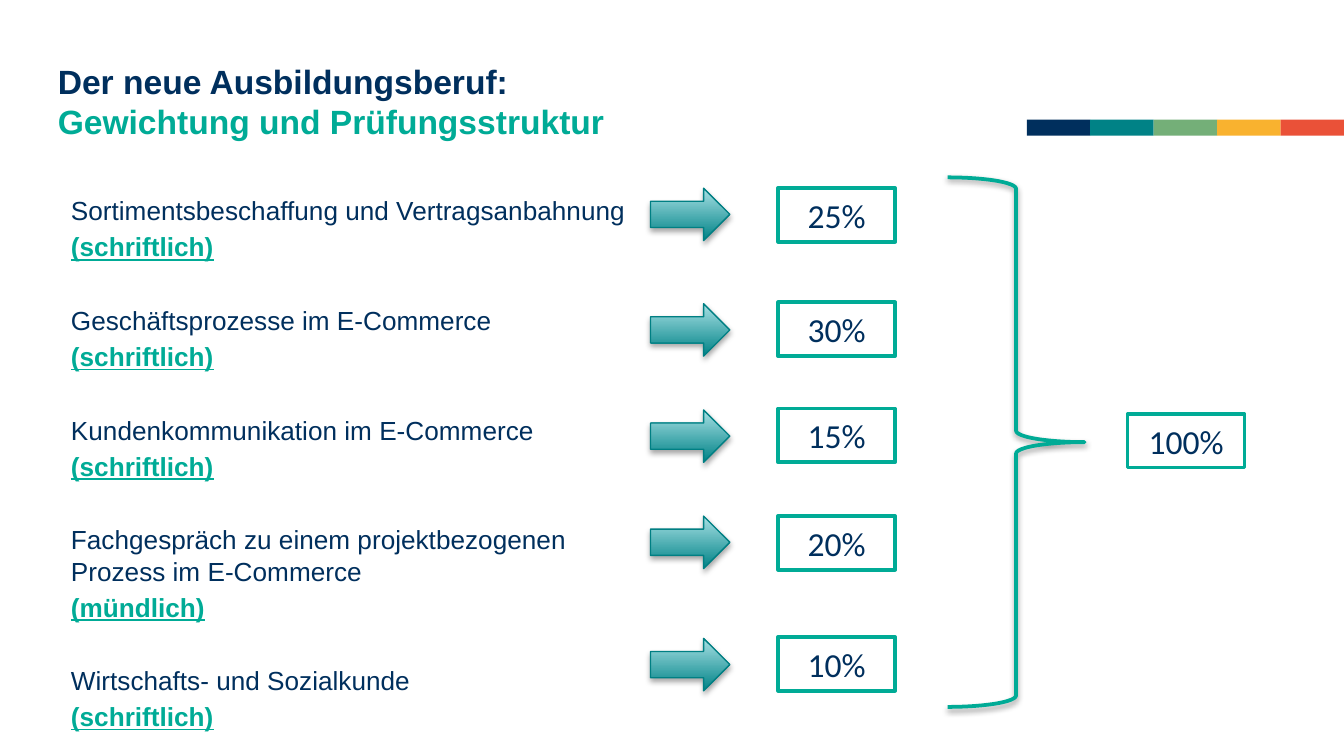
from lxml import etree
from pptx import Presentation
from pptx.dml.color import RGBColor
from pptx.enum.shapes import MSO_SHAPE as Shape
from pptx.enum.text import MSO_ANCHOR as Anchor, MSO_AUTO_SIZE as AutoSize, PP_ALIGN as Align
from pptx.oxml.ns import qn
from pptx.util import Inches, Pt

NAVY, GREEN, TEAL = "002F5D", "00AB96", "008286"
STRIPES = [NAVY, TEAL, "74AF78", "F9B22F", "EA5138"]
# exam part, kind of exam, weight, top of its arrow, top of its weight box
EXAMS = [
    ("Sortimentsbeschaffung und Vertragsanbahnung", "(schriftlich)", "25%", 1.4, 1.4),
    ("Geschäftsprozesse im E-Commerce", "(schriftlich)", "30%", 2.26, 2.25),
    ("Kundenkommunikation im E-Commerce", "(schriftlich)", "15%", 3.05, 3.04),
    ("Fachgespräch zu einem projektbezogenen\vProzess im E-Commerce", "(mündlich)", "20%", 3.84, 3.84),
    ("Wirtschafts- und Sozialkunde", "(schriftlich)", "10%", 4.75, 4.74),
]
TOPIC = dict(name="Arial", size=Pt(14), bold=False, underline=False)
KIND = dict(TOPIC, bold=True, underline=True)
HEADING = dict(name="Arial", size=Pt(18), bold=True)
WEIGHT = dict(name="Calibri", size=Pt(18), bold=False)


def rgb(color):
    return RGBColor.from_string(color)


def set_font(font, color, values):
    for attribute, value in values.items():
        setattr(font, attribute, value)
    font.color.rgb = rgb(color)


def add_plain_shape(slide, kind, box, fill=None, line=None, width=2):
    shape = slide.shapes.add_shape(kind, *map(Inches, box))
    shape.shadow.inherit = False
    if fill:
        shape.fill.solid()
        shape.fill.fore_color.rgb = rgb(fill)
    else:
        shape.fill.background()
    if line:
        shape.line.color.rgb = rgb(line)
        shape.line.width = Pt(width)
    else:
        shape.line.fill.background()
    return shape


def add_drop_shadow(shape, distance, opacity):
    effects = shape._element.spPr.find(qn("a:effectLst"))
    shadow = etree.SubElement(effects, qn("a:outerShdw"), blurRad=str(Pt(3.1)),
                              dist=str(Pt(distance)), dir="5400000", rotWithShape="0")
    color = etree.SubElement(shadow, qn("a:srgbClr"), val="000000")
    etree.SubElement(color, qn("a:alpha"), val=str(opacity * 1000))


def add_stripes(slide, left, top, width, height):
    step = width / len(STRIPES)
    for index, color in enumerate(STRIPES):
        add_plain_shape(slide, Shape.RECTANGLE, (left + index * step, top, step, height), color)


def fill_title(slide, left, top, width, height):
    title = slide.shapes.title
    title.left, title.top, title.width, title.height = map(Inches, (left, top, width, height))
    frame = title.text_frame
    frame_format = dict(margin_left=0, margin_top=0, margin_right=0, margin_bottom=0,
                        vertical_anchor=Anchor.TOP, auto_size=AutoSize.NONE, word_wrap=True)
    for attribute, value in frame_format.items():
        setattr(frame, attribute, value)
    paragraph = frame.paragraphs[0]
    paragraph.alignment = Align.LEFT
    heading = paragraph.add_run()
    heading.text = "Der neue Ausbildungsberuf:"
    set_font(heading.font, NAVY, HEADING)
    paragraph.add_line_break()
    subject = paragraph.add_run()
    subject.text = "Gewichtung und Prüfungsstruktur"
    set_font(subject.font, GREEN, HEADING)


def add_exam_list(slide, left, top, width, height):
    frame = slide.shapes.add_textbox(*map(Inches, (left, top, width, height))).text_frame
    frame.word_wrap = True
    for index, (topic, kind, *_) in enumerate(EXAMS):
        topic_line = frame.add_paragraph() if index else frame.paragraphs[0]
        if index:
            topic_line.space_before = Pt(22.6)
        topic_line.text = topic
        set_font(topic_line.font, NAVY, TOPIC)
        kind_line = frame.add_paragraph()
        kind_line.space_before = Pt(2.5)
        kind_line.text = kind
        set_font(kind_line.font, GREEN, KIND)


def add_arrow(slide, left, top):
    arrow = add_plain_shape(slide, Shape.RIGHT_ARROW, (left, top, 0.59, 0.39),
                            line="007F83", width=0.75)
    arrow.fill.gradient()
    arrow.fill.gradient_angle = 90
    for stop, color in zip(arrow.fill.gradient_stops, (TEAL, "A7E0E4")):
        stop.color.rgb = rgb(color)
    add_drop_shadow(arrow, 1.8, 35)


def add_weight(slide, left, top, weight):
    box = add_plain_shape(slide, Shape.RECTANGLE, (left, top, 0.87, 0.4), "FFFFFF", GREEN)
    paragraph = box.text_frame.paragraphs[0]
    paragraph.text = weight
    paragraph.alignment = Align.CENTER
    set_font(paragraph.font, NAVY, WEIGHT)


def add_total(slide, left, top, width, height):
    brace = add_plain_shape(slide, Shape.RIGHT_BRACE, (left, top, width, height), line=GREEN)
    add_drop_shadow(brace, 1.6, 38)
    add_weight(slide, left + width + 0.32, top + height / 2 - 0.21, "100%")


def main():
    deck = Presentation()
    deck.slide_width = Inches(10)
    deck.slide_height = deck.slide_width * 9 // 16
    slide = deck.slides.add_slide(deck.slide_layouts[5])
    add_stripes(slide, 7.64, 0.89, 2.36, 0.12)
    fill_title(slide, 0.43, 0.45, 6.93, 0.71)
    add_exam_list(slide, 0.43, 1.4, 5.2, 4.02)
    for _, _, weight, arrow_top, weight_top in EXAMS:
        add_arrow(slide, 4.84, arrow_top)
        add_weight(slide, 5.79, weight_top, weight)
    add_total(slide, 7.05, 1.32, 1.02, 3.94)
    deck.save("out.pptx")


if __name__ == "__main__":
    main()
